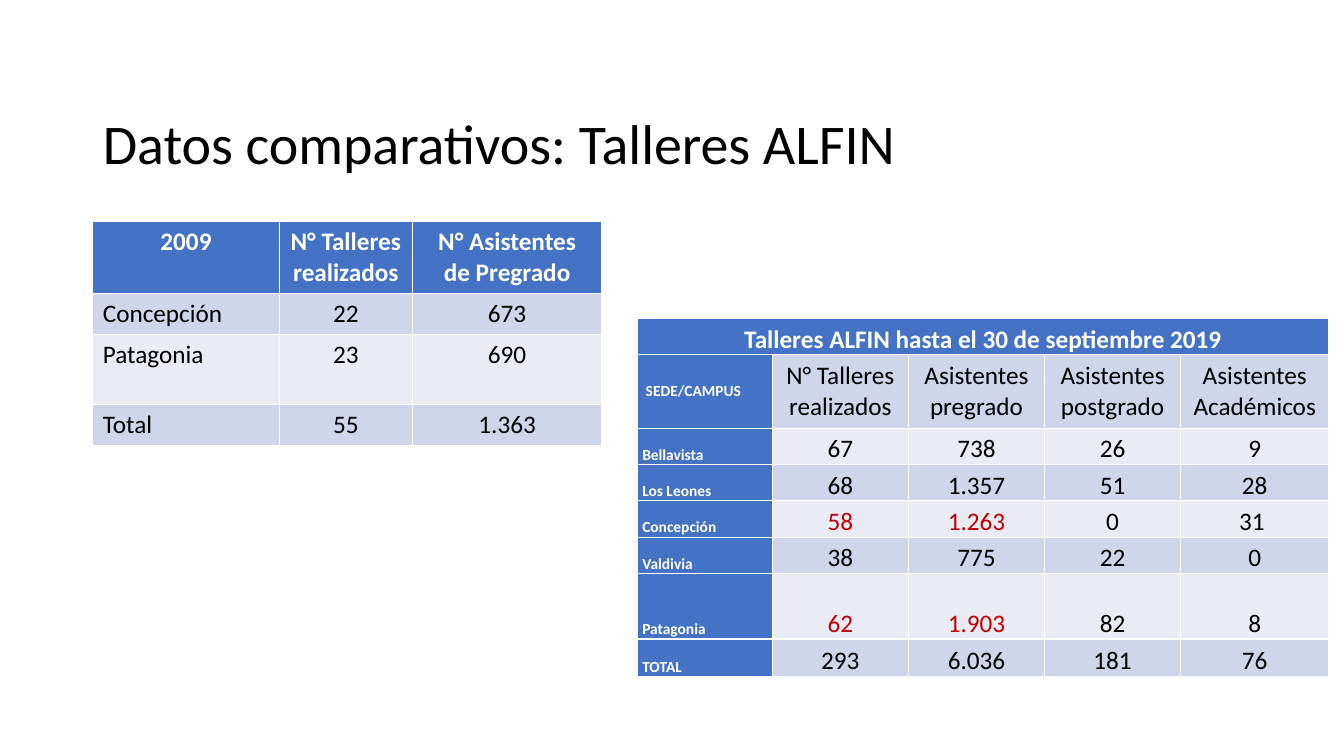
from pptx import Presentation
from pptx.dml.color import RGBColor
from pptx.enum import text
from pptx.util import Inches, Pt

FONT = "Calibri"
BLACK = RGBColor(0x00, 0x00, 0x00)
WHITE = RGBColor(0xFF, 0xFF, 0xFF)
RED = RGBColor(0xC0, 0x00, 0x00)
BLUE = RGBColor(0x44, 0x72, 0xC4)
BANDS = [RGBColor(0xCF, 0xD5, 0xEA), RGBColor(0xE9, 0xEB, 0xF5)]

WORKSHOPS_2009 = [
    ["2009", "N° Talleres realizados", "N° Asistentes de Pregrado"],
    ["Concepción", "22", "673"],
    ["Patagonia", "23", "690"],
    ["Total", "55", "1.363"],
]
WORKSHOPS_2019 = [
    ["Talleres ALFIN hasta el 30 de septiembre 2019", "", "", "", ""],
    [" SEDE/CAMPUS", "N° Talleres realizados", "Asistentes\npregrado",
     "Asistentes\npostgrado", "Asistentes\nAcadémicos"],
    ["Bellavista", "67", "738", "26", "9"],
    ["Los Leones", "68", "1.357", "51", "28"],
    ["Concepción", "58", "1.263", "0", "31 "],
    ["Valdivia", "38", "775", "22", "0"],
    ["Patagonia", "62", "1.903", "82", "8"],
    ["TOTAL", "293", "6.036", "181", "76"],
]
HIGHLIGHTED = {"58", "1.263", "62", "1.903"}


def style_paragraph(paragraph, size, color, bold=False, align=text.PP_ALIGN.LEFT):
    paragraph.alignment = align
    for run in paragraph.runs:
        run.font.name = FONT
        run.font.size = Pt(size)
        run.font.bold = bold
        run.font.color.rgb = color


def add_title(slide, words):
    title = slide.shapes.title
    title.left, title.top = Inches(0.92), Inches(0.92)
    title.width, title.height = Inches(11.5), Inches(1.07)
    frame = title.text_frame
    frame.text = words
    frame.vertical_anchor = text.MSO_ANCHOR.MIDDLE
    frame.paragraphs[0].line_spacing = 0.9
    style_paragraph(frame.paragraphs[0], 40, BLACK)


def fill_cell(cell, words, fill, size, color, bold, align):
    cell.fill.solid()
    cell.fill.fore_color.rgb = fill
    paragraph = cell.text_frame.paragraphs[0]
    paragraph.text = words
    style_paragraph(paragraph, size, color, bold, align)


def add_data_table(slide, rows, left, top, widths, heights, label_column=False):
    frame = slide.shapes.add_table(
        len(rows), len(widths), Inches(left), Inches(top),
        Inches(sum(widths)), Inches(sum(heights)))
    table = frame.table
    table.first_col = label_column
    for column, width in zip(table.columns, widths):
        column.width = Inches(width)
    for row, height in zip(table.rows, heights):
        row.height = Inches(height)
    for i, values in enumerate(rows):
        for j, words in enumerate(values):
            label = j == 0 and i > 0
            accent = i == 0 or (label and label_column)
            color = WHITE if accent else BLACK
            if label_column and words in HIGHLIGHTED:
                color = RED
            fill_cell(
                table.cell(i, j), words,
                BLUE if accent else BANDS[(i + 1) % 2],
                11 if label and label_column else 18, color, accent,
                text.PP_ALIGN.LEFT if label else text.PP_ALIGN.CENTER)
    return table


def tighten_cells(table):
    for i, row in enumerate(table.rows):
        for cell in row.cells:
            cell.margin_left = cell.margin_right = Inches(0.05)
            cell.margin_top = cell.margin_bottom = 0
            cell.vertical_anchor = (
                text.MSO_ANCHOR.MIDDLE if i == 1 else text.MSO_ANCHOR.BOTTOM)


def main():
    presentation = Presentation()
    presentation.slide_width = Inches(13.33)
    presentation.slide_height = Inches(7.5)
    slide = presentation.slides.add_slide(presentation.slide_layouts[5])
    add_title(slide, "Datos comparativos: Talleres ALFIN")
    add_data_table(slide, WORKSHOPS_2009, 0.92, 2.2,
                   [1.85, 1.32, 1.88], [0.7, 0.4, 0.7, 0.4])
    campus_table = add_data_table(
        slide, WORKSHOPS_2019, 6.32, 3.16, [1.34, 1.35, 1.35, 1.35, 1.47],
        [0.36, 0.73, 0.36, 0.36, 0.36, 0.36, 0.65, 0.37], label_column=True)
    campus_table.cell(0, 0).merge(campus_table.cell(0, 4))
    tighten_cells(campus_table)
    presentation.save("out.pptx")


if __name__ == "__main__":
    main()
